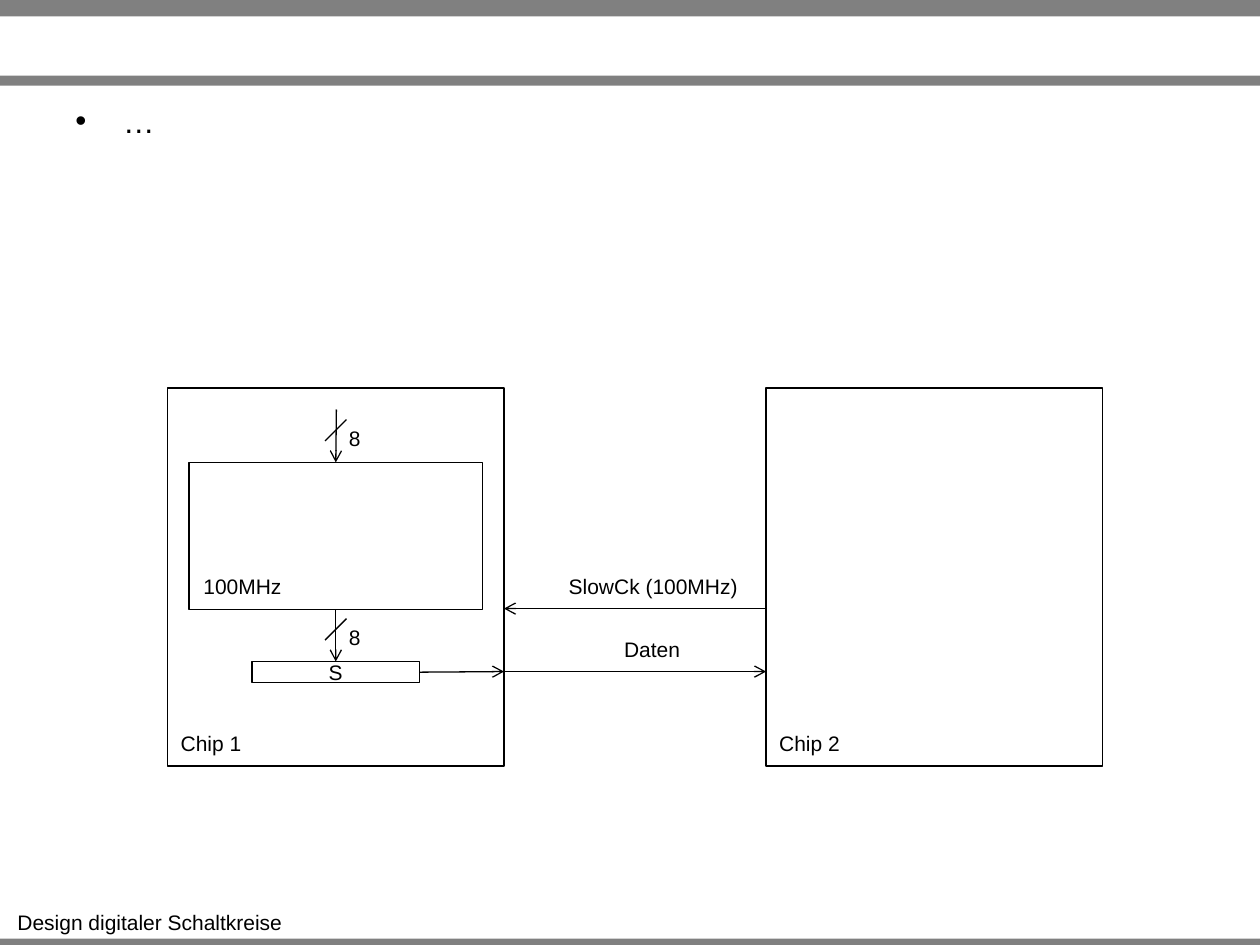
from lxml.etree import SubElement
from pptx import Presentation
from pptx.dml.color import RGBColor
from pptx.enum.shapes import MSO_CONNECTOR, MSO_SHAPE
from pptx.enum.text import MSO_ANCHOR, MSO_AUTO_SIZE, PP_ALIGN
from pptx.oxml.ns import qn
from pptx.util import Inches, Pt

BLACK = RGBColor(0, 0, 0)
GRAY = RGBColor(0x80, 0x80, 0x80)
TOP, LEFT, BOTTOM, RIGHT = range(4)


class Board:
    font = "Arial"
    size = 12
    width = 0.75

    def __init__(self, slide):
        self.shapes = slide.shapes

    def style(self, para, size=size):
        para.font.name = self.font
        para.font.size = Pt(size)
        para.font.color.rgb = BLACK

    def rect(self, x, y, w, h):
        shape = self.shapes.add_shape(
            MSO_SHAPE.RECTANGLE, Inches(x), Inches(y), Inches(w), Inches(h))
        shape.shadow.inherit = False
        return shape

    def bar(self, y, h):
        shape = self.rect(0, y, 10, h)
        shape.fill.solid()
        shape.fill.fore_color.rgb = GRAY
        shape.line.fill.background()

    def block(self, x, y, w, h, text=""):
        """Draw an outlined box, with centred text if any is given."""
        shape = self.rect(x, y, w, h)
        shape.fill.background()
        shape.line.color.rgb = BLACK
        shape.line.width = Pt(self.width)
        if text:
            frame = shape.text_frame
            frame.margin_top = frame.margin_bottom = 0
            frame.vertical_anchor = MSO_ANCHOR.MIDDLE
            para = frame.paragraphs[0]
            para.text = text
            para.alignment = PP_ALIGN.CENTER
            self.style(para)
        return shape

    def label(self, text, x, y, w):
        box = self.shapes.add_textbox(Inches(x), Inches(y), Inches(w), Inches(0.3))
        frame = box.text_frame
        frame.word_wrap = False
        frame.auto_size = MSO_AUTO_SIZE.SHAPE_TO_FIT_TEXT
        para = frame.paragraphs[0]
        para.text = text
        para.alignment = PP_ALIGN.CENTER
        self.style(para)

    def bullet(self, text, x, y, w, h):
        box = self.shapes.add_textbox(Inches(x), Inches(y), Inches(w), Inches(h))
        box.text_frame.word_wrap = True
        para = box.text_frame.paragraphs[0]
        para.text = text
        props = para._p.get_or_add_pPr()
        props.set("marL", str(Inches(0.38)))
        props.set("indent", str(-Inches(0.38)))
        SubElement(props, qn("a:buFont"), typeface=self.font)
        SubElement(props, qn("a:buChar"), char="•")
        self.style(para, 18)

    def line(self, x1, y1, x2, y2):
        link = self.shapes.add_connector(
            MSO_CONNECTOR.STRAIGHT, Inches(x1), Inches(y1), Inches(x2), Inches(y2))
        link.line.color.rgb = BLACK
        link.line.width = Pt(self.width)
        SubElement(link._element.spPr, qn("a:effectLst"))
        return link

    def arrow(self, x1, y1, x2, y2):
        link = self.line(x1, y1, x2, y2)
        SubElement(link.line._get_or_add_ln(), qn("a:tailEnd"), type="arrow")
        return link

    def bus(self, x, y, bits):
        """Draw a downward arrow with a slash and its bit count."""
        link = self.arrow(x, y, x, y + 0.42)
        self.line(x + 0.08, y + 0.08, x - 0.09, y + 0.25)
        self.label(bits, x, y + 0.08, 0.29)
        return link

    def chip(self, x, name):
        self.block(x, 3.08, 2.67, 3)
        self.label(name, x, 5.75, 0.69)


def main():
    deck = Presentation()
    deck.slide_width, deck.slide_height = Inches(10), Inches(7.5)
    board = Board(deck.slides.add_slide(deck.slide_layouts[6]))

    for y, h in ((7.45, 0.08), (0, 0.13), (0.6, 0.08)):
        board.bar(y, h)
    board.label("Design digitaler Schaltkreise", 0.03, 7.17, 2.32)
    board.bullet("…", 0.5, 0.76, 9, 0.99)

    board.chip(1.33, "Chip 1")
    board.chip(6.08, "Chip 2")
    core = board.block(1.5, 3.67, 2.33, 1.17)
    board.label("100MHz", 1.51, 4.5, 0.83)
    store = board.block(2, 5.25, 1.33, 0.17, "S")

    board.bus(2.67, 3.25, "8").end_connect(core, TOP)
    feed = board.bus(2.67, 4.83, "8")
    feed.begin_connect(core, BOTTOM)
    feed.end_connect(store, TOP)

    board.arrow(3.33, 5.33, 4, 5.33).begin_connect(store, RIGHT)
    board.arrow(4, 5.33, 6.08, 5.33)
    board.label("Daten", 4.85, 5, 0.65)
    board.arrow(6.08, 4.83, 4, 4.83)
    board.label("SlowCk (100MHz)", 4.41, 4.5, 1.55)

    deck.save("out.pptx")


if __name__ == "__main__":
    main()
